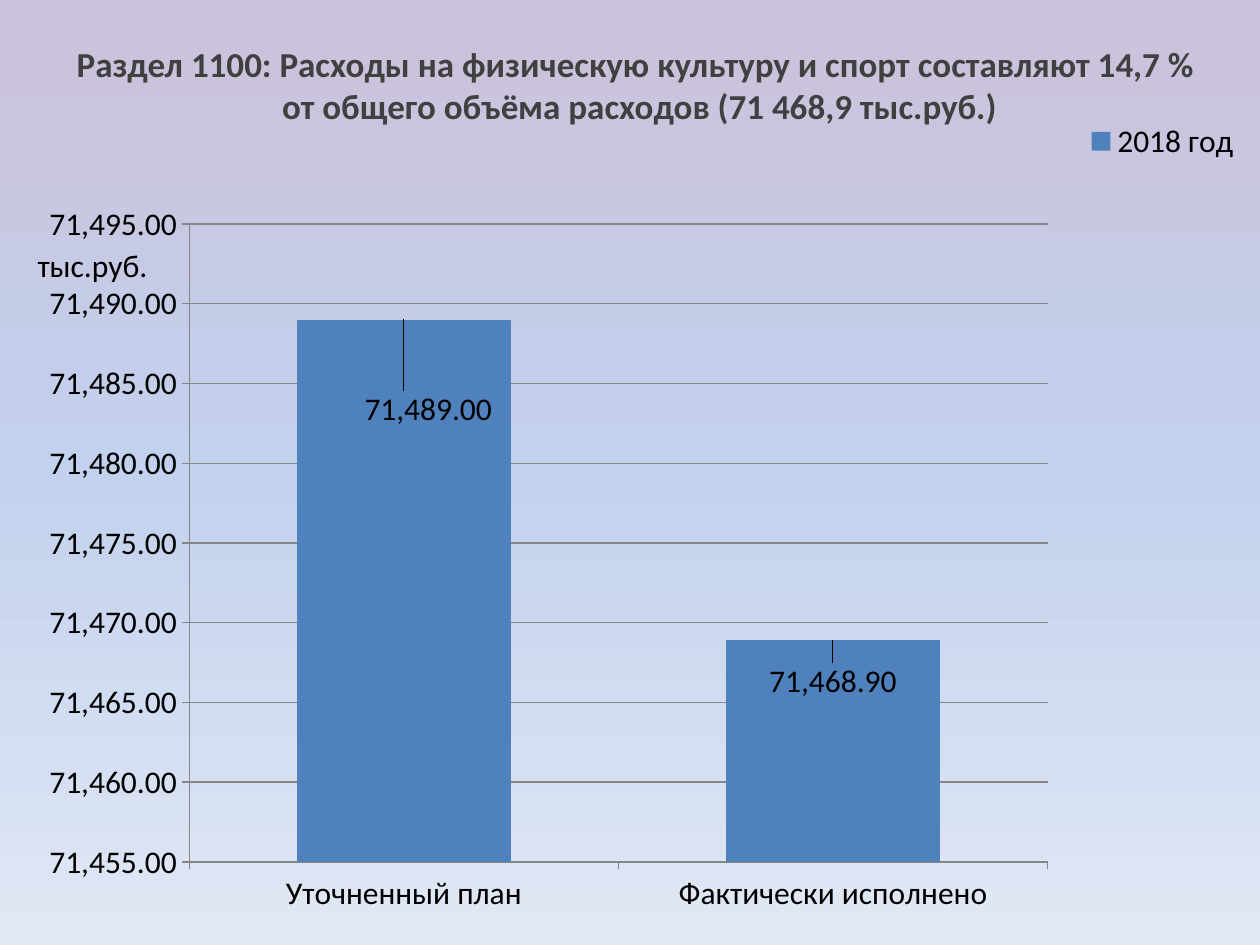
from lxml import etree
from pptx import Presentation
from pptx.chart.data import CategoryChartData
from pptx.dml.color import RGBColor
from pptx.enum.chart import XL_CHART_TYPE, XL_LABEL_POSITION, XL_LEGEND_POSITION, XL_TICK_MARK
from pptx.enum.text import MSO_ANCHOR, PP_ALIGN
from pptx.oxml import parse_xml
from pptx.oxml.ns import nsdecls, qn
from pptx.util import Pt

COLUMNS = XL_CHART_TYPE.COLUMN_CLUSTERED
OUTSIDE_END = XL_LABEL_POSITION.OUTSIDE_END
CORNER = XL_LEGEND_POSITION.CORNER
TICK_OUT = XL_TICK_MARK.OUTSIDE
CENTER = PP_ALIGN.CENTER
TOP = MSO_ANCHOR.TOP

# Content
TITLE = ("Раздел 1100: Расходы на физическую культуру и спорт составляют 14,7 %  "
         "от общего объёма расходов (71 468,9 тыс.руб.)")
UNIT = "тыс.руб."
SERIES = "2018 год"
EXPENSES = [("Уточненный план", 71489), ("Фактически исполнено", 71468.9)]
LABEL_OFFSETS = [(0.02, 0.14), (0, 0.08)]  # shares of the chart size
BACKGROUND = [(0, "CCC1DA"), (50, "C2D1ED"), (100, "E1E8F5")]
FONT = "Calibri"
NUMBER_FORMAT = "#,##0.00"
AXIS_GRAY = "868686"
NO_LEADER_LINES = (
    f'<c:extLst {nsdecls("c")}><c:ext uri="{{CE6537A1-D6FC-4f65-9D91-7224C49458BB}}" '
    'xmlns:c15="http://schemas.microsoft.com/office/drawing/2012/chart">'
    '<c15:showLeaderLines val="0"/></c:ext></c:extLst>')


def color(hex_text):
    return RGBColor.from_string(hex_text)


def format_font(font, size=18, fill="000000", bold=False):
    font.name, font.size, font.bold = FONT, Pt(size), bold
    font.color.rgb = color(fill)


def write(text_frame, text, align=CENTER, **font_format):
    text_frame.text = text
    paragraph = text_frame.paragraphs[0]
    paragraph.alignment = align
    paragraph.space_before = Pt(0)
    format_font(paragraph.runs[0].font, **font_format)


def set_layout(element, index, modes=True, target=None, **shares):
    """Give a chart part a manual layout as shares of the chart size."""
    for old in element.findall(qn("c:layout")):
        element.remove(old)
    layout = parse_xml(f"<c:layout {nsdecls('c')}><c:manualLayout/></c:layout>")
    settings = [("layoutTarget", target)] if target else []
    if modes:
        settings += [("xMode", "edge"), ("yMode", "edge")]
    for name, value in settings + list(shares.items()):
        etree.SubElement(layout[0], qn(f"c:{name}")).set("val", str(value))
    element.insert(index, layout)


presentation = Presentation()
presentation.slide_width, presentation.slide_height = Pt(720), Pt(540)
slide = presentation.slides.add_slide(presentation.slide_layouts[5])

# Background gradient, top to bottom
fill = slide.background.fill
fill.gradient()
gradient = slide.background._cSld.find(".//" + qn("a:gradFill"))
stops = "".join(f'<a:gs pos="{position * 1000}"><a:srgbClr val="{value}"/></a:gs>'
                for position, value in BACKGROUND)
gradient.replace(gradient.find(qn("a:gsLst")),
                 parse_xml(f"<a:gsLst {nsdecls('a')}>{stops}</a:gsLst>"))
gradient.find(qn("a:lin")).set("ang", "5400000")

# Title
title = slide.shapes.title
title.left, title.top, title.width, title.height = Pt(25.5), Pt(20.5), Pt(680), Pt(40)
title.text_frame.word_wrap = True
title.text_frame.vertical_anchor = TOP
write(title.text_frame, TITLE, size=20, fill="404040", bold=True)

# Chart
data = CategoryChartData(number_format=NUMBER_FORMAT)
data.categories = [name for name, _ in EXPENSES]
data.add_series(SERIES, [value for _, value in EXPENSES])
chart = slide.shapes.add_chart(COLUMNS, Pt(14), Pt(66.2), Pt(697.7), Pt(465), data).chart
format_font(chart.font)
set_layout(chart._chartSpace.chart.plotArea, 0, target="inner",
           x=0.135, y=0.133, w=0.703, h=0.784)

chart.has_title = True
write(chart.chart_title.text_frame, UNIT)
set_layout(chart.chart_title._element, 1, x=0.006, y=0.15)

chart.has_legend = True
chart.legend.position = CORNER
chart.legend.include_in_layout = False
set_layout(chart.legend._element, 1, x=0.87, y=0)

# Axes
value_axis = chart.value_axis
value_axis.minimum_scale, value_axis.maximum_scale = 71455, 71495
value_axis.major_unit = 5
value_axis.has_major_gridlines = True
value_axis.tick_labels.number_format = NUMBER_FORMAT
value_axis.tick_labels.number_format_is_linked = False
for axis in (chart.category_axis, value_axis):
    axis.major_tick_mark = TICK_OUT
    axis.format.line.color.rgb = color(AXIS_GRAY)
value_axis.major_gridlines.format.line.color.rgb = color(AXIS_GRAY)

# Columns and their labels
plot = chart.plots[0]
plot.gap_width = 100
plot.vary_by_categories = False
series = plot.series[0]
series.format.fill.solid()
series.format.fill.fore_color.rgb = color("4F81BD")
series.data_labels.show_value = True
series.data_labels.number_format = NUMBER_FORMAT
series.data_labels.number_format_is_linked = False
for index, (x, y) in enumerate(LABEL_OFFSETS):
    label = series.points[index].data_label
    format_font(label.font)
    label.position = OUTSIDE_END
    set_layout(label._dLbl, 1, modes=False, x=x, y=y)

# Labels stand inside the columns without leader lines
labels = series.data_labels._element
for leader_lines in labels.findall(qn("c:showLeaderLines")):
    labels.remove(leader_lines)
labels.append(parse_xml(NO_LEADER_LINES))

presentation.save("out.pptx")
